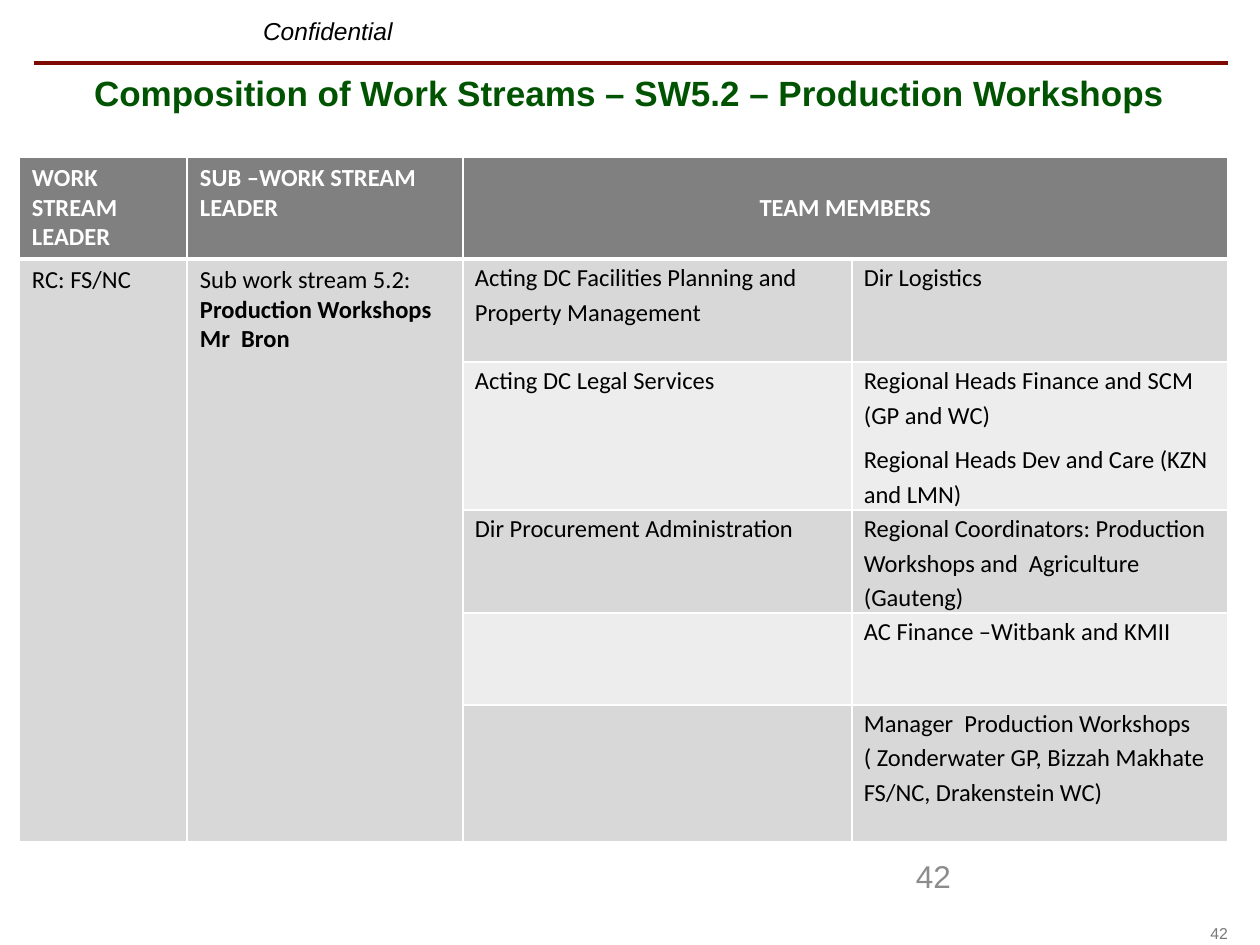
from lxml import etree
from pptx import Presentation
from pptx.dml.color import RGBColor
from pptx.enum.shapes import MSO_CONNECTOR
from pptx.enum.text import MSO_ANCHOR, PP_ALIGN
from pptx.oxml.ns import qn
from pptx.util import Pt

PX = 914400 / 126
LEFT, CENTER, RIGHT = PP_ALIGN.LEFT, PP_ALIGN.CENTER, PP_ALIGN.RIGHT
TOP, MIDDLE = MSO_ANCHOR.TOP, MSO_ANCHOR.MIDDLE
STRAIGHT = MSO_CONNECTOR.STRAIGHT
COLORS = {
    "rule": "7D0900", "title": "005300", "text": "000000", "white": "FFFFFF",
    "header": "808080", "dark_band": "D8D8D8", "light_band": "EDEDED",
    "page": "8C8C8C", "footer": "77787B",
}
MEMBER = {"margins": (9, 0, 9, 0), "line_spacing": 1.15, "space_before": Pt(6), "indent": 3}


def px(value):
    return round(value * PX)


def rgb(name):
    return RGBColor.from_string(COLORS[name])


class SlideBuilder:
    """Holds the style and the current slide."""

    def __init__(self, slide):
        self.slide = slide

    def fill_text(self, frame, paragraphs, size=14, font="Calibri", color="text", align=LEFT,
                  line_spacing=None, space_before=None, indent=0, **font_format):
        """Each paragraph is a list of (text, bold) runs or a plain string."""
        for index, runs in enumerate(paragraphs):
            paragraph = frame.paragraphs[0] if index == 0 else frame.add_paragraph()
            layout = {"alignment": align, "line_spacing": line_spacing,
                      "space_before": space_before if index else None}
            for name, value in layout.items():
                setattr(paragraph, name, value)
            if indent:
                paragraph._p.get_or_add_pPr().set("marL", str(px(indent)))
            if isinstance(runs, str):
                runs = [(runs, font_format.get("bold", False))]
            for text, bold in runs:
                run = paragraph.add_run()
                run.text = text
                values = {"size": Pt(size), "name": font, **font_format, "bold": bold}
                for name, value in values.items():
                    setattr(run.font, name, value)
                run.font.color.rgb = rgb(color)

    def set_margins(self, target, margins):
        for side, value in zip(("left", "top", "right", "bottom"), margins):
            setattr(target, f"margin_{side}", px(value))

    def text(self, box, content, margins=(13, 6, 13, 6), anchor=TOP, **style):
        frame = self.slide.shapes.add_textbox(*map(px, box)).text_frame
        frame.word_wrap = True
        frame.vertical_anchor = anchor
        self.set_margins(frame, margins)
        self.fill_text(frame, [content], **style)

    def line(self, start, end, color, width):
        connector = self.slide.shapes.add_connector(STRAIGHT, *map(px, start + end))
        connector.line.color.rgb = rgb(color)
        connector.line.width = Pt(width)
        etree.SubElement(connector._element.spPr, qn("a:effectLst"))

    def table(self, left, top, widths, heights):
        frame = self.slide.shapes.add_table(
            len(heights), len(widths), px(left), px(top), px(sum(widths)), px(sum(heights)))
        table = frame.table
        for column, width in zip(table.columns, widths):
            column.width = px(width)
        for row, height in zip(table.rows, heights):
            row.height = px(height)
        return table

    def borders(self, cell, widths):
        properties = cell._tc.get_or_add_tcPr()
        for side, width in widths.items():
            border = etree.SubElement(properties, qn(f"a:ln{side}"), w=str(Pt(width)))
            fill = etree.SubElement(border, qn("a:solidFill"))
            etree.SubElement(fill, qn("a:srgbClr"), val=COLORS["white"])

    def cell(self, cell, fill, borders, paragraphs=(), margins=(13, 6, 13, 6),
             anchor=TOP, **style):
        self.borders(cell, borders)
        cell.fill.solid()
        cell.fill.fore_color.rgb = rgb(fill)
        cell.vertical_anchor = anchor
        self.set_margins(cell, margins)
        self.fill_text(cell.text_frame, paragraphs, **style)


def main():
    presentation = Presentation()
    presentation.slide_width, presentation.slide_height = px(1260), px(945)
    slide = presentation.slides.add_slide(presentation.slide_layouts[6])
    builder = SlideBuilder(slide)

    # Page heading
    builder.line((34, 63), (1228, 63), "rule", 2.25)
    builder.text((253, 6, 232, 49), "Confidential", margins=(10, 10, 10, 10),
                 font="Arial", italic=True)
    builder.text((94, 76, 1116, 83),
                 "Composition of Work Streams – SW5.2 – Production Workshops",
                 margins=(0, 0, 0, 0), size=20, font="Arial", color="title",
                 bold=True, line_spacing=0.9)

    # Work stream table
    table = builder.table(19, 157, (168, 276, 389, 376), (102, 103, 148, 103, 92, 137))
    table.cell(0, 2).merge(table.cell(0, 3))
    for column in (0, 1):
        table.cell(1, column).merge(table.cell(5, column))

    # Header row
    thin = dict.fromkeys("LRTB", 1)
    under_header = {**thin, "T": 3}
    headers = [("WORK STREAM LEADER", {}), ("SUB –WORK STREAM LEADER", {}),
               ("TEAM MEMBERS", {"align": CENTER, "anchor": MIDDLE}), (None, {})]
    for column, (header, style) in enumerate(headers):
        builder.cell(table.cell(0, column), "header", {**thin, "B": 3},
                     [header] if header else [], color="white", bold=True, **style)

    # Leaders, spanning all member rows
    leaders = [["RC: FS/NC"],
               [[("Sub work stream 5.2: ", False), ("Production Workshops", True)],
                [("Mr  Bron", True)]]]
    for column, paragraphs in enumerate(leaders):
        for row in range(1, 6):
            builder.cell(table.cell(row, column), "dark_band",
                         under_header if row == 1 else thin,
                         paragraphs if row == 1 else [])

    # Team members in banded rows
    members = [
        (["Acting DC Facilities Planning and Property Management"], ["Dir Logistics"]),
        (["Acting DC Legal Services"],
         ["Regional Heads Finance and SCM (GP and WC)",
          "Regional Heads Dev and Care (KZN and LMN)"]),
        (["Dir Procurement Administration"],
         ["Regional Coordinators: Production Workshops and  Agriculture (Gauteng)"]),
        ([], ["AC Finance –Witbank and KMII"]),
        ([], ["Manager  Production Workshops ( Zonderwater GP, Bizzah Makhate FS/NC, "
              "Drakenstein WC)"]),
    ]
    for row, pair in enumerate(members, start=1):
        for column, paragraphs in enumerate(pair, start=2):
            builder.cell(table.cell(row, column), "dark_band" if row % 2 else "light_band",
                         under_header if row == 1 else thin, paragraphs, **MEMBER)

    # Page numbers
    builder.text((903, 851, 294, 50), "42", size=18, font="Arial", color="page")
    builder.text((1192, 924, 36, 19), "42", margins=(0, 0, 0, 0), anchor=MIDDLE,
                 size=9, font="Arial", color="footer", align=RIGHT)

    presentation.save("out.pptx")


if __name__ == "__main__":
    main()
